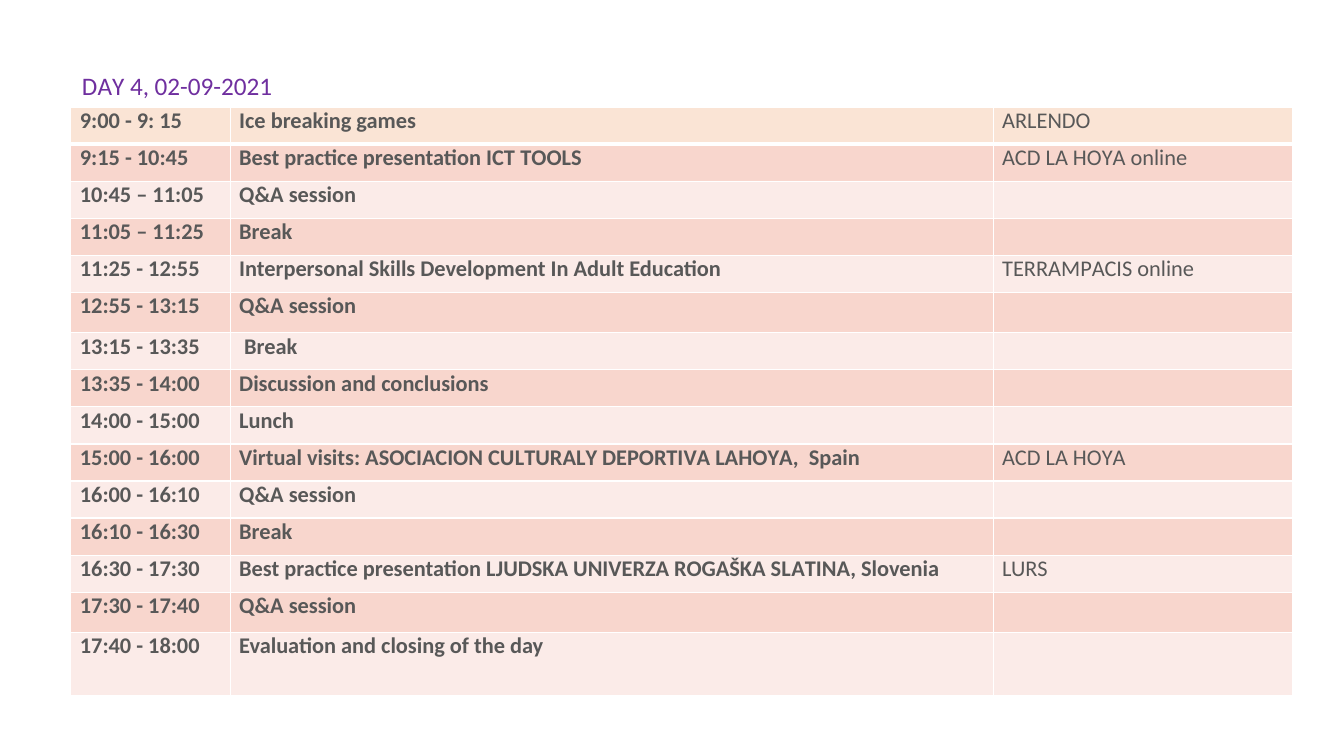
from itertools import groupby

from lxml.etree import SubElement as Sub
from pptx import Presentation
from pptx.dml.color import RGBColor as RGB
from pptx.oxml.ns import qn
from pptx.util import Pt

PURPLE = RGB(0x6F, 0x2F, 0x9F)
GREY = RGB(0x58, 0x58, 0x58)
WHITE = RGB(0xFF, 0xFF, 0xFF)
PEACH = RGB(0xFA, 0xE4, 0xD5)
ROSE = RGB(0xF8, 0xD6, 0xCD)
BLUSH = RGB(0xFB, 0xEB, 0xE8)

KERN = {"LT": -130, "LY": -150, "VA": -80, "OY": -50, "YA": -120,
        "PA": -110, "AT": -120, "AY": -140, "TO": -50}
COLS = (113.8, 545, 213.8)
ROW, TALL, LAST = 26.5, 28.8, 45.2
INDENT, DEEP = 6.5, 10

PLAN = (
    ("9:00 - 9: 15", "Ice breaking games", "ARLENDO"),
    ("9:15 - 10:45", "Best practice presentation ICT TOOLS", "ACD LA HOYA online"),
    ("10:45 – 11:05", "Q&A session", ""),
    ("11:05 – 11:25", "Break", ""),
    ("11:25 - 12:55", "Interpersonal Skills Development In Adult Education",
     "TERRAMPACIS online"),
    ("12:55 - 13:15", "Q&A session", ""),
    ("13:15 - 13:35", "Break", ""),
    ("13:35 - 14:00", "Discussion and conclusions", ""),
    ("14:00 - 15:00", "Lunch", ""),
    ("15:00 - 16:00",
     "Virtual visits: ASOCIACION CULTURALY DEPORTIVA LAHOYA,  Spain", "ACD LA HOYA"),
    ("16:00 - 16:10", "Q&A session", ""),
    ("16:10 - 16:30", "Break", ""),
    ("16:30 - 17:30",
     "Best practice presentation LJUDSKA UNIVERZA ROGAŠKA SLATINA, Slovenia", "LURS"),
    ("17:30 - 17:40", "Q&A session", ""),
    ("17:40 - 18:00", "Evaluation and closing of the day", ""),
)
HEIGHTS = {5: TALL, 13: TALL, 14: LAST}


def write(frame, text, size, color, bold=False, indent=0):
    """Write one line as runs, tightening the kerned letter pairs."""
    para = frame.paragraphs[0]
    props = para._p.get_or_add_pPr()
    props.set("marL", str(Pt(indent)))
    props.set("indent", "0")
    pairs = [(a, KERN.get(a + b, 0)) for a, b in zip(text, text[1:] + " ")]
    for space, group in groupby(pairs, key=lambda pair: pair[1]):
        run = para.add_run()
        run.text = "".join(char for char, _ in group)
        font = run.font
        font.name, font.size, font.bold = "Calibri", Pt(size), bold
        font.color.rgb = color
        if space:
            run._r.get_or_add_rPr().set("spc", str(space))


def edge(cell, row):
    """Draw the white borders of a cell, thick below the first row."""
    props = cell._tc.get_or_add_tcPr()
    wide = {"lnB": row == 0, "lnT": row == 1}
    for side in ("lnL", "lnR", "lnT", "lnB"):
        width = Pt(3 if wide.get(side) else 1)
        line = Sub(props, qn("a:" + side), w=str(width))
        fill = Sub(line, qn("a:solidFill"))
        Sub(fill, qn("a:srgbClr"), val=str(WHITE))


def title(slide):
    """Add the heading with the day and date."""
    box = slide.shapes.add_textbox(Pt(57.6), Pt(50.4), Pt(845.3), Pt(23.8))
    frame = box.text_frame
    frame.word_wrap = True
    frame.margin_left = frame.margin_right = 0
    frame.margin_top = frame.margin_bottom = 0
    write(frame, "DAY 4, 02-09-2021", 18, PURPLE, indent=1)


def agenda(slide):
    """Add the timetable of the day."""
    heights = [HEIGHTS.get(i, ROW) for i in range(len(PLAN))]
    table = slide.shapes.add_table(
        len(PLAN), len(COLS), Pt(50.6), Pt(76.5), Pt(sum(COLS)), Pt(sum(heights))
    ).table
    for col, width in zip(table.columns, COLS):
        col.width = Pt(width)
    for i, texts in enumerate(PLAN):
        table.rows[i].height = Pt(heights[i])
        shade = PEACH if i == 0 else ROSE if i % 2 else BLUSH
        for j, text in enumerate(texts):
            cell = table.cell(i, j)
            cell.margin_left = cell.margin_right = 0
            cell.margin_top = cell.margin_bottom = 0
            edge(cell, i)
            cell.fill.solid()
            cell.fill.fore_color.rgb = shade
            indent = DEEP if (i, j) == (6, 1) else INDENT
            if text:
                write(cell.text_frame, text, 16, GREY, j < 2, indent)


def main():
    """Build and save the slide."""
    deck = Presentation()
    deck.slide_width, deck.slide_height = Pt(960), Pt(540)
    slide = deck.slides.add_slide(deck.slide_layouts[6])
    title(slide)
    agenda(slide)
    deck.save("out.pptx")


if __name__ == "__main__":
    main()
